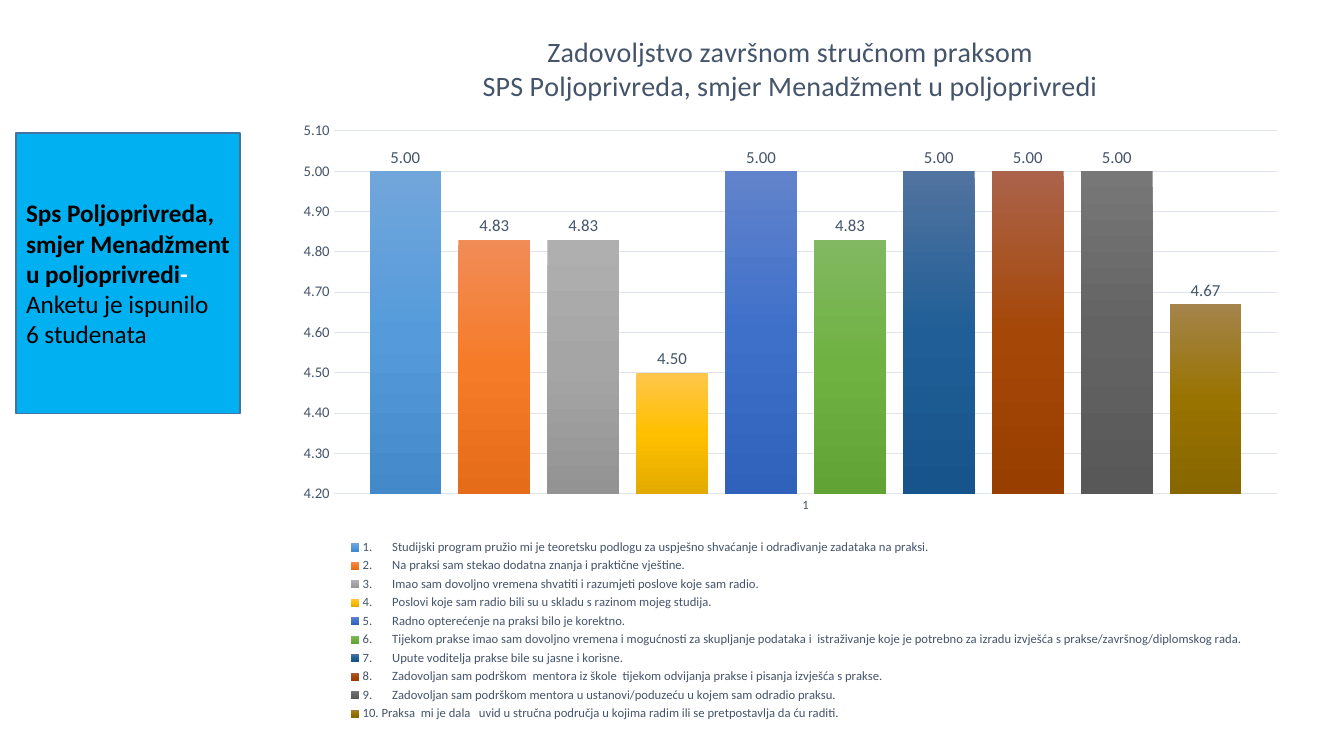
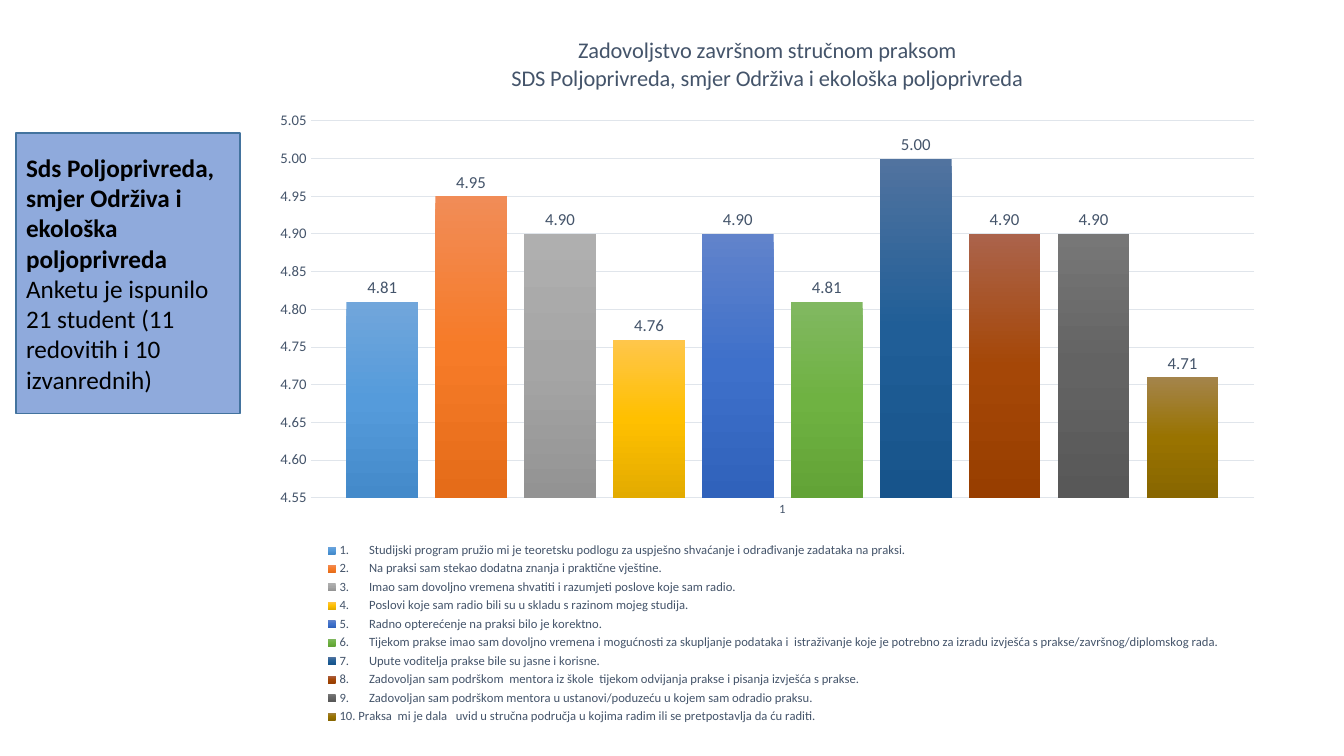
from lxml import etree
from pptx import Presentation
from pptx.chart.data import CategoryChartData
from pptx.dml.color import RGBColor
from pptx.enum.chart import XL_CHART_TYPE, XL_LABEL_POSITION, XL_LEGEND_POSITION, XL_TICK_MARK
from pptx.enum.shapes import MSO_SHAPE
from pptx.enum.text import MSO_ANCHOR, PP_ALIGN
from pptx.oxml.ns import qn
from pptx.util import Pt

COLUMNS = XL_CHART_TYPE.COLUMN_CLUSTERED
OUTSIDE_END = XL_LABEL_POSITION.OUTSIDE_END
LEGEND_BOTTOM = XL_LEGEND_POSITION.BOTTOM
NO_TICK = XL_TICK_MARK.NONE
RECTANGLE = MSO_SHAPE.RECTANGLE
MIDDLE = MSO_ANCHOR.MIDDLE
LEFT = PP_ALIGN.LEFT

# Style
PX = 9144  # EMU per px, 100 px to the inch
FONT = "Calibri"
TWO_DECIMALS = "0.00"
BLACK = RGBColor(0x00, 0x00, 0x00)
WHITE = RGBColor(0xFF, 0xFF, 0xFF)
SLATE = RGBColor(0x44, 0x54, 0x6A)
GRID = RGBColor(0xE0, 0xE5, 0xEB)
BORDER = RGBColor(0x43, 0x73, 0x9E)
CYAN = RGBColor(0x00, 0xB0, 0xF0)
PERIWINKLE = RGBColor(0x8F, 0xAA, 0xDC)

# Survey statements, each with the top, middle and bottom colour of its column
STATEMENTS = [
    ("Studijski program pružio mi je teoretsku podlogu za uspješno shvaćanje i "
     "odrađivanje zadataka na praksi.", "71A6DB 559BDB 448ACA"),
    ("Na praksi sam stekao dodatna znanja i praktične vještine.", "F18C57 F67B28 E56C19"),
    ("Imao sam dovoljno vremena shvatiti i razumjeti poslove koje sam radio.",
     "AFAFAF A5A5A5 939393"),
    ("Poslovi koje sam radio bili su u skladu s razinom mojeg studija.",
     "FFC64B FFC000 E3AB00"),
    ("Radno opterećenje na praksi bilo je korektno.", "6183CB 3E70CA 3062BB"),
    ("Tijekom prakse imao sam dovoljno vremena i mogućnosti za skupljanje podataka i  "
     "istraživanje koje je potrebno za izradu izvješća s prakse/završnog/diplomskog rada.",
     "81B861 6FB242 62A336"),
    ("Upute voditelja prakse bile su jasne i korisne.", "51739F 205E97 17548B"),
    ("Zadovoljan sam podrškom  mentora iz škole  tijekom odvijanja prakse i pisanja "
     "izvješća s prakse.", "AB634B A54707 983E00"),
    ("Zadovoljan sam podrškom mentora u ustanovi/poduzeću u kojem sam odradio praksu.",
     "777777 636363 585858"),
    ("Praksa  mi je dala   uvid u stručna područja u kojima radim ili se pretpostavlja "
     "da ću raditi.", "A4844B 997300 886600"),
]
NUMBER_GAP = " " * 6  # no-break spaces line up the one-digit numbers

# One entry per study programme; boxes are left, top, width, height
SURVEYS = [
    dict(
        note_fill=CYAN,
        note=[[("Sps Poljoprivreda, smjer Menadžment u poljoprivredi", True, BLACK),
               ("- ", True, WHITE), ("Anketu je ispunilo", False, BLACK)],
              [("6 studenata", False, BLACK)]],
        title=["Zadovoljstvo završnom stručnom praksom",
               "SPS Poljoprivreda, smjer Menadžment u poljoprivredi"],
        title_size=20,
        scores=[5, 4.83, 4.83, 4.5, 5, 4.83, 5, 5, 5, 4.67],
        scale=(4.2, 5.1, 0.1),
        chart_box=(281, 10, 1006, 711),
        plot_box=(331, 130, 936, 360),
    ),
    dict(
        note_fill=PERIWINKLE,
        note=[[("Sds Poljoprivreda, smjer Održiva i ekološka poljoprivreda", True, BLACK)],
              [("Anketu je ispunilo", False, BLACK)],
              [("21 student (11 redovitih i 10 izvanrednih)", False, BLACK)]],
        title=["Zadovoljstvo završnom stručnom praksom",
               "SDS Poljoprivreda, smjer Održiva i ekološka poljoprivreda"],
        title_size=16,
        scores=[4.81, 4.95, 4.9, 4.76, 4.9, 4.81, 5, 4.9, 4.9, 4.71],
        scale=(4.55, 5.05, 0.05),
        chart_box=(258, 13, 1006, 711),
        plot_box=(308, 120, 936, 374),
    ),
]
NOTE_BOX = (16, 132, 222, 278)
LEGEND_OFFSET = (56, 522)  # from the chart's corner
LEGEND_SIZE = (905, 187)


def style_font(font, size, color, bold=False):
    font.name, font.size, font.bold = FONT, Pt(size), bold
    font.color.rgb = color


def place(part, index, box, chart_box, inner=False):
    """Fix a chart part at a slide position."""
    for old in part.findall(qn("c:layout")):
        part.remove(old)
    layout = etree.Element(qn("c:layout"))
    manual = etree.SubElement(layout, qn("c:manualLayout"))
    settings = [("layoutTarget", "inner")] if inner else []
    settings += [("xMode", "edge"), ("yMode", "edge")]
    left, top, width, height = box
    chart_left, chart_top, chart_width, chart_height = chart_box
    settings += [("x", (left - chart_left) / chart_width),
                 ("y", (top - chart_top) / chart_height),
                 ("w", width / chart_width), ("h", height / chart_height)]
    for tag, value in settings:
        etree.SubElement(manual, qn("c:" + tag), val=str(value))
    part.insert(index, layout)


def fill_downwards(series, colors):
    """Give a series a vertical gradient of three evenly spaced colours."""
    series.format.fill.gradient()
    gradient = series._element.find(".//" + qn("a:gradFill"))
    for child in list(gradient):
        gradient.remove(child)
    stops = etree.SubElement(gradient, qn("a:gsLst"))
    for position, color in zip((0, 50000, 100000), colors.split()):
        stop = etree.SubElement(stops, qn("a:gs"), pos=str(position))
        etree.SubElement(stop, qn("a:srgbClr"), val=color)
    etree.SubElement(gradient, qn("a:lin"), ang="5400000", scaled="0")


class Deck:
    def __init__(self):
        self.prs = Presentation()
        self.prs.slide_width, self.prs.slide_height = 1333 * PX, 750 * PX
        self.slide = None

    def new_slide(self):
        self.slide = self.prs.slides.add_slide(self.prs.slide_layouts[6])

    def note(self, paragraphs, fill):
        panel = self.slide.shapes.add_shape(RECTANGLE, *(n * PX for n in NOTE_BOX))
        panel.shadow.inherit = False
        panel.fill.solid()
        panel.fill.fore_color.rgb = fill
        panel.line.color.rgb = BORDER
        panel.line.width = Pt(1)
        frame = panel.text_frame
        frame.word_wrap = True
        frame.vertical_anchor = MIDDLE
        for index, runs in enumerate(paragraphs):
            paragraph = frame.paragraphs[0] if index == 0 else frame.add_paragraph()
            paragraph.alignment = LEFT
            for text, bold, color in runs:
                run = paragraph.add_run()
                run.text = text
                style_font(run.font, 18, color, bold)

    def score_chart(self, survey):
        data = CategoryChartData(number_format=TWO_DECIMALS)
        data.categories = ["1"]
        for number, ((statement, _), score) in enumerate(zip(STATEMENTS, survey["scores"]), 1):
            gap = NUMBER_GAP if number < 10 else ""
            data.add_series(f"{number}.{gap} {statement}", [score])
        box = survey["chart_box"]
        chart = self.slide.shapes.add_chart(COLUMNS, *(n * PX for n in box), data).chart
        style_font(chart.font, 10, BLACK)
        self.chart_title(chart, survey["title"], survey["title_size"])
        self.columns(chart.plots[0])
        self.axes(chart, survey["scale"])
        plot_area = chart.plots[0]._element.getparent()
        place(plot_area, 0, survey["plot_box"], box, inner=True)
        self.legend(chart, box)

    def chart_title(self, chart, lines, size):
        chart.has_title = True
        chart.chart_title.include_in_layout = False
        frame = chart.chart_title.text_frame
        for index, line in enumerate(lines):
            paragraph = frame.paragraphs[0] if index == 0 else frame.add_paragraph()
            run = paragraph.add_run()
            run.text = line
            style_font(run.font, size, SLATE)

    def columns(self, plot):
        plot.gap_width, plot.overlap = 100, -24
        plot.vary_by_categories = False
        for series, (_, colors) in zip(plot.series, STATEMENTS):
            fill_downwards(series, colors)
            labels = series.data_labels
            labels.show_value = True
            labels.position = OUTSIDE_END
            labels.number_format = TWO_DECIMALS
            labels.number_format_is_linked = False
            style_font(labels.font, 12, SLATE)

    def axes(self, chart, scale):
        category, value = chart.category_axis, chart.value_axis
        for axis, size in ((category, 9), (value, 10.5)):
            axis.major_tick_mark = axis.minor_tick_mark = NO_TICK
            style_font(axis.tick_labels.font, size, SLATE)
        value.minimum_scale, value.maximum_scale, value.major_unit = scale
        value.tick_labels.number_format = TWO_DECIMALS
        value.tick_labels.number_format_is_linked = False
        value.format.line.fill.background()
        value.has_major_gridlines = True
        for line in (category.format.line, value.major_gridlines.format.line):
            line.color.rgb = GRID
            line.width = Pt(0.75)

    def legend(self, chart, chart_box):
        chart.has_legend = True
        legend = chart.legend
        legend.position = LEGEND_BOTTOM
        legend.include_in_layout = False
        style_font(legend.font, 9, SLATE)
        corner = tuple(a + b for a, b in zip(chart_box, LEGEND_OFFSET))
        place(legend._element, 1, corner + LEGEND_SIZE, chart_box)


def main():
    deck = Deck()
    for survey in SURVEYS:
        deck.new_slide()
        deck.note(survey["note"], survey["note_fill"])
        deck.score_chart(survey)
    deck.prs.save("out.pptx")


if __name__ == "__main__":
    main()
